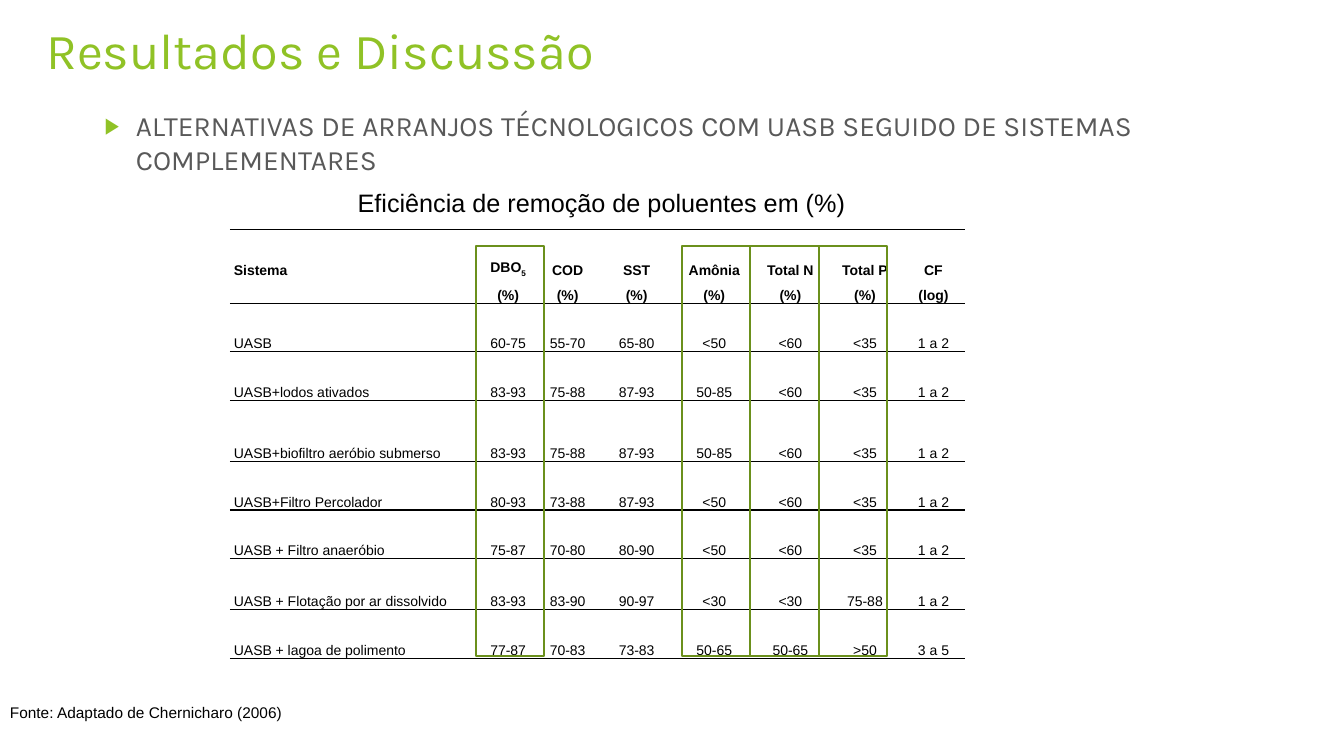
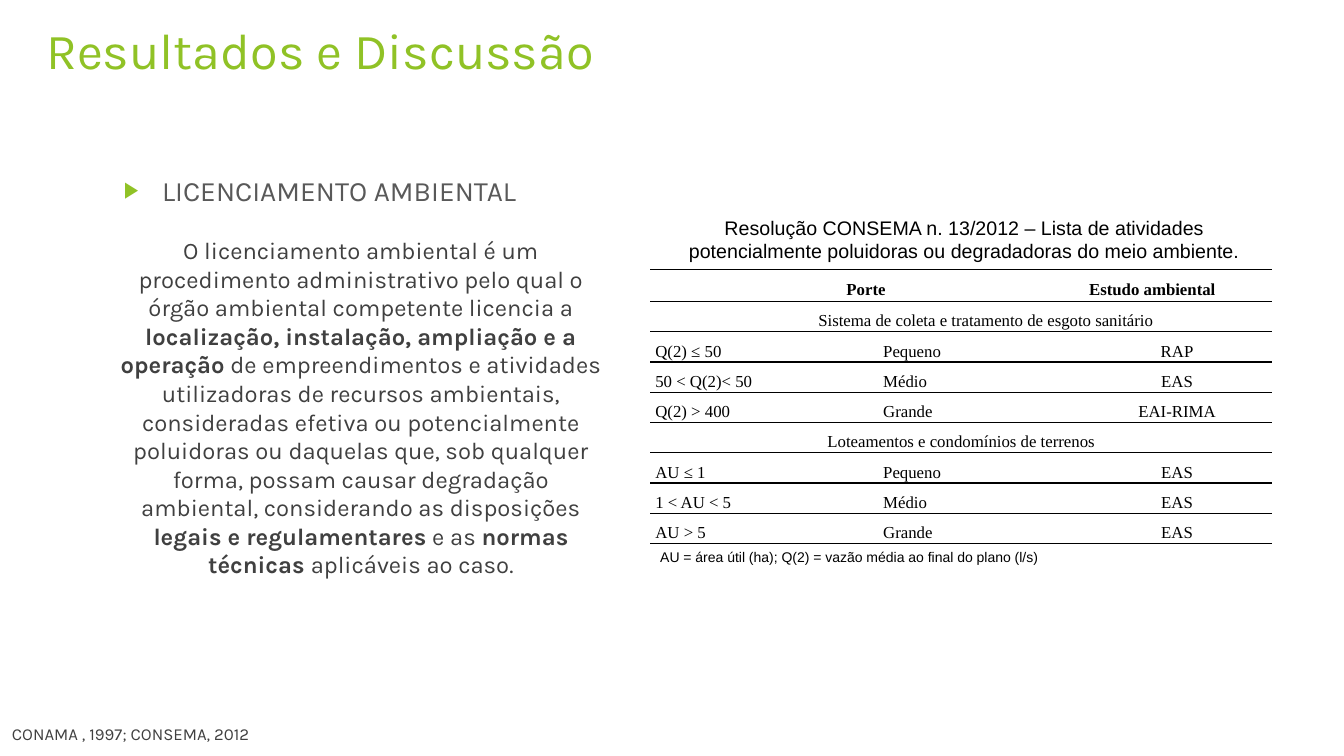
"""Builds the two results slides on effluent treatment and licensing."""
from lxml.etree import SubElement
from pptx import Presentation
from pptx.dml.color import RGBColor
from pptx.enum.shapes import MSO_SHAPE as Shape
from pptx.enum.text import MSO_ANCHOR as Anchor, PP_ALIGN as Align
from pptx.oxml.ns import qn
from pptx.util import Inches, Pt

GREEN = RGBColor(0x90, 0xC2, 0x26)
DARK_GREEN = RGBColor(0x6B, 0x90, 0x1C)
BLACK = RGBColor(0, 0, 0)
GRAY = RGBColor(0x59, 0x59, 0x59)
DARK_GRAY = RGBColor(0x40, 0x40, 0x40)
THEME_FONT, PLAIN_FONT, SERIF_FONT = "Karla", "Arial", "Times New Roman"


class Deck:
    """Holds the shared style and the current slide."""

    def __init__(self):
        self.prs = Presentation()
        self.prs.slide_width, self.prs.slide_height = Inches(13.33), Inches(7.5)
        self.slide = None

    def new_slide(self, title):
        self.slide = self.prs.slides.add_slide(self.prs.slide_layouts[6])
        self.text(title, (0.36, 0.14, 9.4, 1.44), 36, THEME_FONT, GREEN)

    def style(self, paragraph, size, font, color, align, bold=None):
        paragraph.alignment = align
        paragraph.font.size, paragraph.font.name = Pt(size), font
        paragraph.font.color.rgb, paragraph.font.bold = color, bold

    def text(self, content, at, size, font=PLAIN_FONT, color=BLACK,
             align=Align.LEFT, anchor=Anchor.TOP):
        """Adds a text box; parts between ** marks are bold."""
        frame = self.slide.shapes.add_textbox(*map(Inches, at)).text_frame
        frame.word_wrap, frame.vertical_anchor = True, anchor
        paragraph = frame.paragraphs[0]
        for index, part in enumerate(content.split("**")):
            run = paragraph.add_run()
            run.text = part
            if index % 2:
                run.font.bold = True
        self.style(paragraph, size, font, color, align)
        return paragraph

    def bullet(self, content, at, left, hanging):
        """Adds a heading with the green triangle bullet."""
        paragraph = self.text(content, at, 20, THEME_FONT, GRAY)
        props = paragraph._p.get_or_add_pPr()
        props.set("marL", str(Inches(left)))
        props.set("indent", str(-Inches(hanging)))
        marks = [(SubElement(props, qn("a:buClr")), None),
                 (SubElement(props, qn("a:buSzPct")), ("val", "80000")),
                 (SubElement(props, qn("a:buFont")), ("typeface", "Arial")),
                 (SubElement(props, qn("a:buChar")), ("char", "▶"))]
        SubElement(marks[0][0], qn("a:srgbClr"), val=str(GREEN))
        for mark, attribute in marks[1:]:
            mark.set(*attribute)
        props.append(props.find(qn("a:defRPr")))

    def highlight(self, at):
        """Adds a green outline."""
        frame = self.slide.shapes.add_shape(Shape.RECTANGLE, *map(Inches, at))
        frame.shadow.inherit = False
        frame.fill.background()
        frame.line.color.rgb, frame.line.width = DARK_GREEN, Pt(1.5)

    def borders(self, cell, top, bottom):
        """Draws the wanted horizontal rules of a cell."""
        props = cell._tc.get_or_add_tcPr()
        for side, shown in (("L", False), ("R", False), ("T", top), ("B", bottom)):
            line = SubElement(props, qn(f"a:ln{side}"), w=str(Pt(1)))
            if shown:
                fill = SubElement(line, qn("a:solidFill"))
                SubElement(fill, qn("a:srgbClr"), val=str(BLACK))
            else:
                SubElement(line, qn("a:noFill"))

    def table(self, rows, at, widths, heights, size, font, aligns, anchor,
              margin, header_rows, merges, rules):
        """Adds a table ruled at the given row boundaries."""
        frame = self.slide.shapes.add_table(
            len(rows), len(widths), *map(Inches, (*at, sum(widths), sum(heights))))
        table = frame.table
        table.first_row = table.horz_banding = False
        for column, width in zip(table.columns, widths):
            column.width = Inches(width)
        for row, height in zip(table.rows, heights):
            row.height = Inches(height)
        for first, last in merges:
            table.cell(*first).merge(table.cell(*last))
        for r, row in enumerate(rows):
            for c, align in enumerate(aligns):
                cell = table.cell(r, c)
                cell.margin_left = cell.margin_right = Inches(margin)
                cell.margin_top = cell.margin_bottom = 0
                cell.vertical_anchor = anchor
                height = cell.span_height if cell.is_merge_origin else 1
                self.borders(cell, r in rules, r + height in rules)
                cell.fill.background()
                if cell.is_spanned:
                    continue
                cell.text = row[c]
                if cell.span_width > 1:
                    align = Align.CENTER
                paragraph = cell.text_frame.paragraphs[0]
                paragraph.line_spacing = 1.5
                self.style(paragraph, size, font, BLACK, align, r < header_rows)
        return table


def efficiency_slide(deck):
    deck.new_slide("Resultados e Discussão")
    deck.text("Eficiência de remoção de poluentes em (%)",
              (2.31, 1.81, 7.31, 0.4), 18, align=Align.CENTER)
    rows = [line.split("|") for line in (
        "Sistema|DBO|COD|SST|Amônia|Total N|Total P|CF",
        "|(%)|(%)|(%)|(%)|(%)|(%)|(log)",
        "UASB|60-75|55-70|65-80|<50|<60|<35|1 a 2",
        "UASB+lodos ativados|83-93|75-88|87-93|50-85|<60|<35|1 a 2",
        "UASB+biofiltro aeróbio submerso|83-93|75-88|87-93|50-85|<60|<35|1 a 2",
        "UASB+Filtro Percolador|80-93|73-88|87-93|<50|<60|<35|1 a 2",
        "UASB + Filtro anaeróbio|75-87|70-80|80-90|<50|<60|<35|1 a 2",
        "UASB + Flotação por ar dissolvido|83-93|83-90|90-97|<30|<30|75-88|1 a 2",
        "UASB + lagoa de polimento|77-87|70-83|73-83|50-65|50-65|>50|3 a 5")]
    efficiency = deck.table(
        rows, (2.28, 2.28), (2.47, 0.58, 0.6, 0.77, 0.77, 0.74, 0.74, 0.62),
        (0.48, 0.25, 0.48, 0.48, 0.61, 0.48, 0.48, 0.51, 0.48), 10, PLAIN_FONT,
        [Align.JUSTIFY] + [Align.CENTER] * 7, Anchor.BOTTOM, 0.04,
        header_rows=2, merges=[((0, 0), (1, 0))], rules={0, *range(2, 10)})
    efficiency.cell(0, 0).vertical_anchor = Anchor.MIDDLE
    subscript = efficiency.cell(0, 1).text_frame.paragraphs[0].add_run()
    subscript.text = "5"
    subscript._r.get_or_add_rPr().set("baseline", "-25000")
    deck.text("Fonte: Adaptado de Chernicharo (2006)",
              (0, 6.88, 2.9, 0.37), 11, anchor=Anchor.MIDDLE)
    deck.bullet("ALTERNATIVAS DE ARRANJOS TÉCNOLOGICOS COM UASB SEGUIDO DE "
                "SISTEMAS COMPLEMENTARES", (0.44, 1.03, 12.59, 0.76), 0.81, 0.31)
    width = 0.68
    for step in (0, 3, 4, 5):
        deck.highlight((4.72 + step * width, 2.44, width, 4.07))


def licensing_slide(deck):
    deck.new_slide("Resultados e Discussão")
    deck.bullet("LICENCIAMENTO AMBIENTAL", (1.13, 1.67, 5, 0.5), 0.38, 0.38)
    rows = [line.split("|") for line in (
        "Porte||Estudo ambiental",
        "Sistema de coleta e tratamento de esgoto sanitário||",
        "Q(2) ≤ 50|Pequeno|RAP",
        "50 < Q(2)< 50|Médio|EAS",
        "Q(2) > 400|Grande|EAI-RIMA",
        "Loteamentos e condomínios de terrenos||",
        "AU ≤ 1|Pequeno|EAS",
        "1 < AU < 5|Médio|EAS",
        "AU > 5|Grande|EAS")]
    studies = deck.table(
        rows, (6.45, 2.67), (1.77, 2.02, 2.38), [0.32] + [0.29] * 8, 12, SERIF_FONT,
        [Align.JUSTIFY, Align.LEFT, Align.CENTER], Anchor.MIDDLE, 0.05,
        header_rows=1, rules=range(10),
        merges=[((0, 0), (0, 1)), ((1, 0), (1, 2)), ((5, 0), (5, 2))])
    indented = [(0, 0), (1, 0)] + [(r, c) for r in (2, 3, 4, 6, 7, 8) for c in (1, 2)]
    for place in indented:
        paragraph = studies.cell(*place).text_frame.paragraphs[0]
        paragraph._p.get_or_add_pPr().set("indent", str(Inches(0.49)))
    deck.text(
        "O licenciamento ambiental é um procedimento administrativo pelo qual o "
        "órgão ambiental competente licencia a** localização, instalação, ampliação "
        "e a operação** de empreendimentos e atividades utilizadoras de recursos "
        "ambientais, consideradas efetiva ou potencialmente poluidoras ou daquelas "
        "que, sob qualquer forma, possam causar degradação ambiental, considerando "
        "as disposições **legais e regulamentares** e as **normas técnicas "
        "**aplicáveis ao caso.",
        (1.02, 2.29, 5.12, 3.53), 17, THEME_FONT, DARK_GRAY, Align.CENTER)
    deck.text("Resolução CONSEMA n. 13/2012 – Lista de atividades potencialmente "
              "poluidoras ou degradadoras do meio ambiente.",
              (6.5, 2.09, 6.13, 0.57), 14, align=Align.CENTER, anchor=Anchor.MIDDLE)
    deck.text("CONAMA , 1997; CONSEMA, 2012", (0.02, 7.13, 13.13, 0.37), 12,
              THEME_FONT, DARK_GRAY)
    deck.text("AU = área útil (ha); Q(2) = vazão média ao final do plano (l/s)",
              (6.45, 5.39, 6.67, 0.27), 10)


def main():
    deck = Deck()
    efficiency_slide(deck)
    licensing_slide(deck)
    deck.prs.save("out.pptx")


if __name__ == "__main__":
    main()
